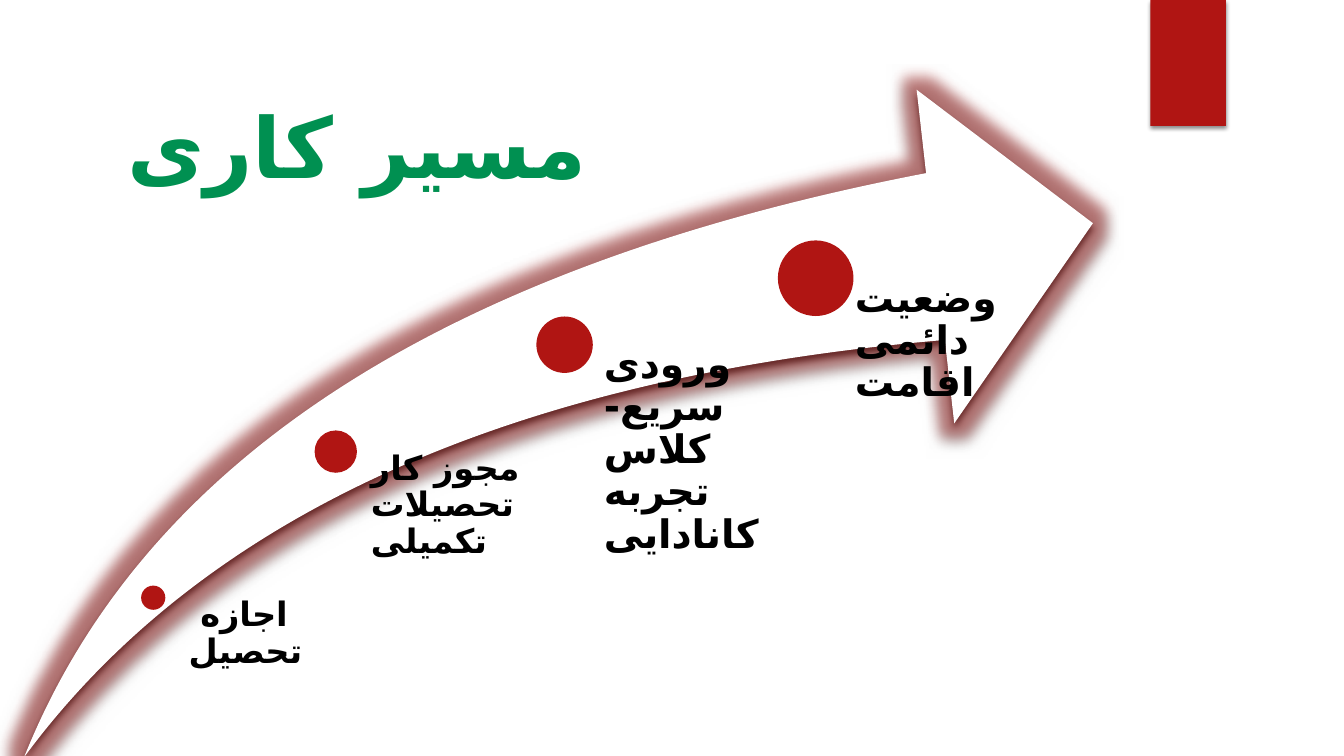
from lxml import etree
from pptx import Presentation, util as u
from pptx.dml.color import RGBColor
from pptx.enum import shapes, text
from pptx.oxml.ns import qn

RED, GREEN, BLACK, WHITE = "B01513", "009051", "000000", "FFFFFF"
KIND = shapes.MSO_SHAPE
FLOOR = 7.51

# centre x, centre y, dot size, label width, left inset, text size, label
STEPS = [
    (1.52, 5.93, 0.24, 1.81, 0.35, 24, " اجازه تحصیل"),
    (3.33, 4.48, 0.42, 2.23, 0.35, 24, "مجوز کار تحصیلات تکمیلی"),
    (5.6, 3.42, 0.56, 2.23, 0.39, 28, "ورودی سریع- کلاس تجربه کانادایی"),
    (8.09, 2.76, 0.75, 2.23, 0.39, 28, "وضعیت دائمی اقامت"),
]


def color(code):
    return RGBColor.from_string(code)


def tint(node, code, alpha=100):
    """Add a colour, with opacity in percent, to an XML node."""
    clr = etree.SubElement(node, qn("a:srgbClr"), val=code)
    etree.SubElement(clr, qn("a:alpha"), val=str(alpha * 1000))


class Deck:
    def __init__(self, font, script):
        self.font = font
        self.script = script
        self.prs = Presentation()
        self.prs.slide_width = u.Inches(13.33)
        self.prs.slide_height = u.Inches(7.5)
        self.slide = self.prs.slides.add_slide(self.prs.slide_layouts[6])

    def shape(self, kind, box, fill):
        item = self.slide.shapes.add_shape(kind, *map(u.Inches, box))
        item.shadow.inherit = False
        item.fill.solid()
        item.fill.fore_color.rgb = color(fill)
        item.line.fill.background()
        return item

    def glow(self, item, code, alpha, size):
        fx = item._element.spPr.find(qn("a:effectLst"))
        node = etree.SubElement(fx, qn("a:glow"), rad=str(u.Pt(size)))
        tint(node, code, alpha)

    def shade(self, item, alpha, blur, dist):
        """Cast a black shadow straight down."""
        fx = item._element.spPr.find(qn("a:effectLst"))
        node = etree.SubElement(
            fx, qn("a:outerShdw"), blurRad=str(u.Pt(blur)),
            dist=str(u.Pt(dist)), dir="5400000", rotWithShape="0")
        tint(node, BLACK, alpha)

    def label(self, box, words, size, code):
        item = self.slide.shapes.add_textbox(*map(u.Inches, box))
        frame = item.text_frame
        frame.word_wrap = True
        run = frame.paragraphs[0].add_run()
        run.text = words
        run.font.size = u.Pt(size)
        run.font.bold = True
        run.font.name = self.font
        run.font.color.rgb = color(code)
        etree.SubElement(run.font._element, qn("a:cs"), typeface=self.script)
        return frame

    def step(self, x, y, dot, wide, inset, size, words):
        """Draw a dot and hang its label from the dot's centre."""
        self.shape(KIND.OVAL, (x - dot / 2, y - dot / 2, dot, dot), RED)
        frame = self.label((x, y, wide, FLOOR - y), words, size, BLACK)
        frame.margin_left = u.Inches(inset)
        frame.margin_top = frame.margin_right = frame.margin_bottom = 0
        frame.paragraphs[0].line_spacing = 0.9

    def title(self, box, words):
        frame = self.label(box, words, 60, GREEN)
        frame.auto_size = text.MSO_AUTO_SIZE.SHAPE_TO_FIT_TEXT
        para = frame.paragraphs[0]
        para.alignment = text.PP_ALIGN.CENTER
        line = etree.Element(qn("a:ln"), w=str(u.Pt(0.75)))
        tint(etree.SubElement(line, qn("a:solidFill")), GREEN)
        para.runs[0].font._element.insert(0, line)


def main():
    deck = Deck("Quicksand", "DejaVu Sans")
    tab = deck.shape(KIND.RECTANGLE, (11.41, 0, 0.75, 1.25), RED)
    deck.shade(tab, 45, 3, 2)

    arrow = deck.shape(KIND.SWOOSH_ARROW, (0.24, 0.89, 10.6, 6.62), WHITE)
    arrow.adjustments[0] = arrow.adjustments[1] = 0.25
    deck.glow(arrow, RED, 40, 18)
    deck.shade(arrow, 80, 4, 4)

    for step in STEPS:
        deck.step(*step)
    deck.title((0.43, 0.89, 6.22, 1.11), "مسیر کاری")
    deck.prs.save("out.pptx")


if __name__ == "__main__":
    main()
